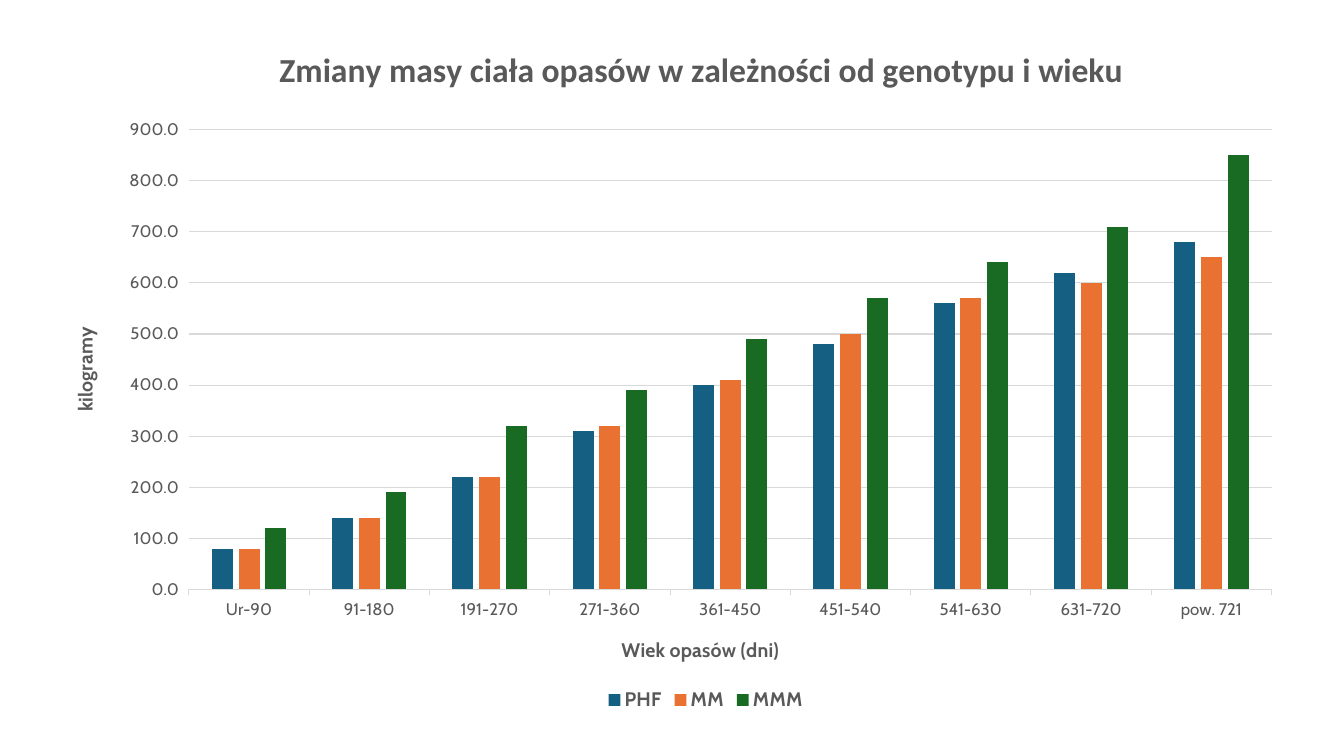
from dataclasses import dataclass

from lxml import etree
from pptx import Presentation
from pptx.chart.data import CategoryChartData
from pptx.dml.color import RGBColor
from pptx.enum import chart as kinds
from pptx.util import Cm, Pt

CHART_NS = "http://schemas.openxmlformats.org/drawingml/2006/chart"
GREY = "595959"
PALE = "D9D9D9"


@dataclass
class Breed:
    name: str
    weights: list[int]
    colour: str


AGES = ["Ur-90", "91-180", "191-270", "271-360", "361-450",
        "451-540", "541-630", "631-720", "pow. 721"]
BREEDS = [
    Breed("PHF", [80, 140, 220, 310, 400, 480, 560, 620, 680], "156082"),
    Breed("MM", [80, 140, 220, 320, 410, 500, 570, 600, 650], "E97132"),
    Breed("MMM", [120, 190, 320, 390, 490, 570, 640, 710, 850], "196B24"),
]


def rgb(colour: str) -> RGBColor:
    return RGBColor.from_string(colour)


def style_font(font, size: float, bold: bool = False, name: str = "Cabin") -> None:
    font.size, font.bold, font.name = Pt(size), bold, name
    font.color.rgb = rgb(GREY)


def style_line(line) -> None:
    line.color.rgb = rgb(PALE)
    line.width = Pt(0.75)


def place(element, after: str = "", **measures: float) -> None:
    """Set a manual layout, in percent of the chart, after the named child."""
    for old in element.findall(f"{{{CHART_NS}}}layout"):
        element.remove(old)
    layout = etree.Element(f"{{{CHART_NS}}}layout")
    manual = etree.SubElement(layout, f"{{{CHART_NS}}}manualLayout")
    shares = {tag: round(percent / 100, 4) for tag, percent in measures.items()}
    settings = {"xMode": "edge", "yMode": "edge", **shares}
    if "w" in measures:
        settings = {"layoutTarget": "inner", **settings}
    for tag, value in settings.items():
        etree.SubElement(manual, f"{{{CHART_NS}}}{tag}", val=str(value))
    if after:
        element.find(f"{{{CHART_NS}}}{after}").addnext(layout)
    else:
        element.insert(0, layout)


def add_title(owner, content: str, x: float, y: float, **font_format) -> None:
    """Title a chart or an axis."""
    owner.has_title = True
    title = owner.chart_title if hasattr(owner, "chart_title") else owner.axis_title
    para = title.text_frame.paragraphs[0]
    span = para.add_run()
    span.text = content
    style_font(span.font, bold=True, **font_format)
    place(title._element, after="tx", x=x, y=y)


def add_weight_chart(page) -> None:
    data = CategoryChartData(number_format="###0.0")
    data.categories = AGES
    for breed in BREEDS:
        data.add_series(breed.name, breed.weights)
    chart = page.shapes.add_chart(
        kinds.XL_CHART_TYPE.COLUMN_CLUSTERED,
        Cm(1.27), Cm(0.89), Cm(31.39), Cm(17.35), data).chart
    style_font(chart.font, 10)

    plot = chart.plots[0]
    plot.gap_width, plot.overlap, plot.vary_by_categories = 219, -27, False
    for series, breed in zip(plot.series, BREEDS):
        series.format.fill.solid()
        series.format.fill.fore_color.rgb = rgb(breed.colour)
    place(plot._element.getparent(), x=11.12, y=13.7, w=86.93, h=66.8)

    ages, weights = chart.category_axis, chart.value_axis
    for axis in (ages, weights):
        style_font(axis.tick_labels.font, 12)
        axis.major_tick_mark = kinds.XL_TICK_MARK.OUTSIDE
    style_line(ages.format.line)
    weights.format.line.fill.background()
    style_line(weights.major_gridlines.format.line)
    weights.minimum_scale, weights.maximum_scale, weights.major_unit = 0, 900, 100
    weights.tick_labels.number_format = "###0.0"
    weights.tick_labels.number_format_is_linked = False

    add_title(chart, "Zmiany masy ciała opasów w zależności od genotypu i wieku",
              17.9, 0.8, size=24, name="Calibri")
    add_title(ages, "Wiek opasów (dni)", 45.55, 86.8, size=14)
    add_title(weights, "kilogramy", 1.4, 41.75, size=14)

    chart.has_legend = True
    legend = chart.legend
    legend.position = kinds.XL_LEGEND_POSITION.BOTTOM
    legend.include_in_layout = False
    style_font(legend.font, 14, bold=True)
    place(legend._element, after="legendPos", x=44.3, y=94.2)


def main() -> None:
    deck = Presentation()
    deck.slide_width, deck.slide_height = Cm(33.87), Cm(19.05)
    page = deck.slides.add_slide(deck.slide_layouts.get_by_name("Blank"))
    add_weight_chart(page)
    deck.save("out.pptx")


if __name__ == "__main__":
    main()
